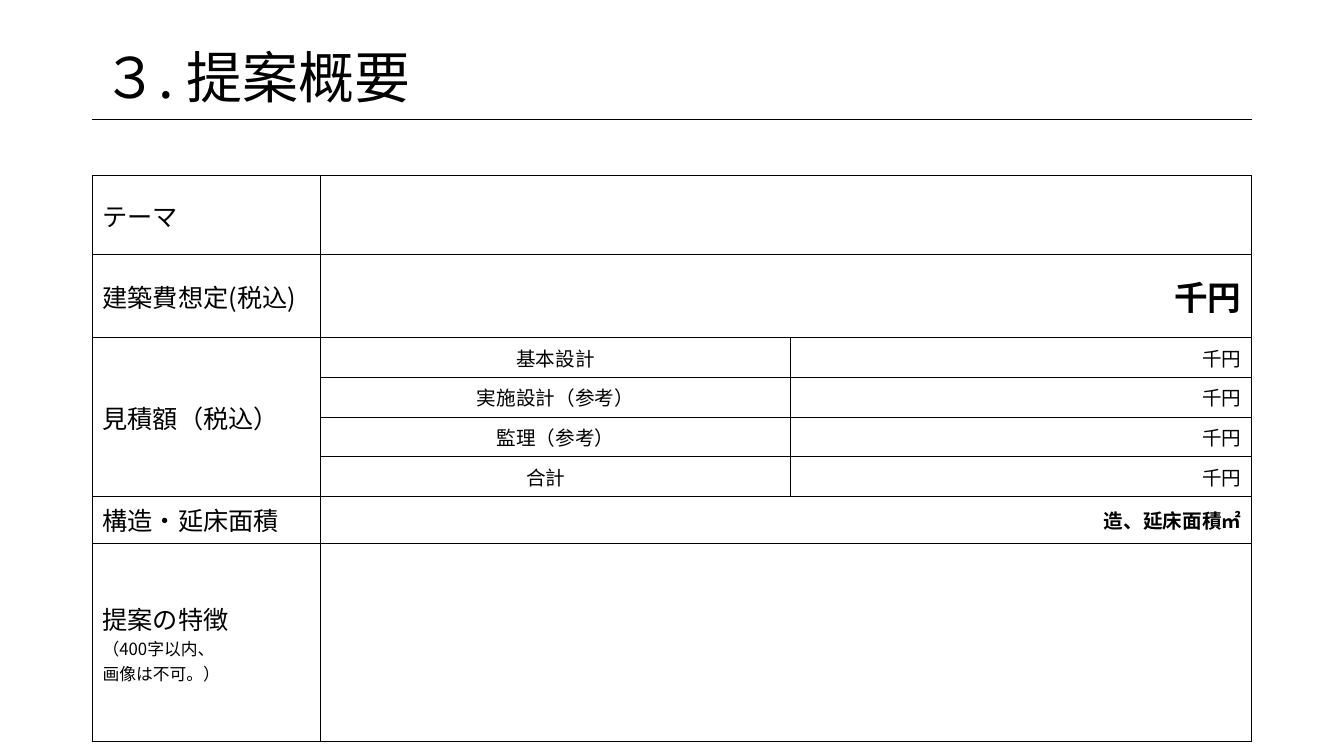
from dataclasses import dataclass

from lxml import etree
from pptx import Presentation
from pptx.dml.color import RGBColor
from pptx.enum.shapes import MSO_CONNECTOR
from pptx.enum.text import MSO_ANCHOR, MSO_AUTO_SIZE, PP_ALIGN
from pptx.oxml.ns import qn
from pptx.util import Cm, Pt

LEFT, CENTER, RIGHT = PP_ALIGN.LEFT, PP_ALIGN.CENTER, PP_ALIGN.RIGHT
MIDDLE = MSO_ANCHOR.MIDDLE
NO_AUTOFIT = MSO_AUTO_SIZE.NONE
STRAIGHT = MSO_CONNECTOR.STRAIGHT

COLORS = {"ink": "000000", "paper": "FFFFFF"}
FONT = "Noto Sans CJK JP"
LABEL_SIZE, DETAIL_SIZE, NOTE_SIZE = 18, 14, 12

MARGIN, WIDTH = 2.33, 29.21
TITLE_TOP, TITLE_HEIGHT = 1.02, 2.0
TABLE_TOP = 4.42
COLUMN_WIDTHS = (5.74, 11.86, 11.61)
ROW_HEIGHTS = (2.0, 1.4, 1.0, 1.0, 1.0, 1.0, 1.0, 5.0)


@dataclass(frozen=True)
class Line:
    text: str
    size: int = LABEL_SIZE
    bold: bool = False


@dataclass(frozen=True)
class Entry:
    row: int
    column: int
    lines: tuple[Line, ...] = ()
    align: PP_ALIGN = LEFT
    row_span: int = 1
    column_span: int = 1


ESTIMATE_ROW = 2
ESTIMATE_ITEMS = ("基本設計", "実施設計（参考）", "監理（参考）", "合計　")

ENTRIES = [
    Entry(0, 0, (Line("テーマ"),)),
    Entry(0, 1, column_span=2),
    Entry(1, 0, (Line("建築費想定(税込)"),)),
    Entry(1, 1, (Line("千円", 24, True),), RIGHT, column_span=2),
    Entry(ESTIMATE_ROW, 0, (Line("見積額（税込）"),), row_span=len(ESTIMATE_ITEMS)),
    Entry(6, 0, (Line("構造・延床面積"),)),
    Entry(6, 1, (Line("造、延床面積㎡", DETAIL_SIZE, True),), RIGHT, column_span=2),
    Entry(7, 0, (Line("提案の特徴"), Line("（400字以内、", NOTE_SIZE),
                 Line("画像は不可。）", NOTE_SIZE))),
    Entry(7, 1, column_span=2),
]
for row, item in enumerate(ESTIMATE_ITEMS, ESTIMATE_ROW):
    ENTRIES += [Entry(row, 1, (Line(item, DETAIL_SIZE),), CENTER),
                Entry(row, 2, (Line("千円", DETAIL_SIZE),), RIGHT)]


def color(name: str) -> RGBColor:
    return RGBColor.from_string(COLORS[name])


def write_line(paragraph, line: Line, align: PP_ALIGN) -> None:
    paragraph.alignment = align
    run = paragraph.add_run()
    run.text = line.text
    font_format = {"size": Pt(line.size), "bold": line.bold, "name": FONT}
    for attribute, value in font_format.items():
        setattr(run.font, attribute, value)
    run.font.color.rgb = color("ink")
    east_asian = etree.SubElement(run.font._element, qn("a:ea"))
    east_asian.set("typeface", FONT)


def style_cell(cell) -> None:
    properties = cell._tc.get_or_add_tcPr()
    for side in ("lnL", "lnR", "lnT", "lnB"):
        border = etree.SubElement(properties, qn(f"a:{side}"), w=str(Pt(1)))
        fill = etree.SubElement(border, qn("a:solidFill"))
        etree.SubElement(fill, qn("a:srgbClr"), val=COLORS["ink"])
    cell.fill.solid()
    cell.fill.fore_color.rgb = color("paper")
    cell.vertical_anchor = MIDDLE


def fill_entry(table, entry: Entry) -> None:
    cell = table.cell(entry.row, entry.column)
    if entry.row_span > 1 or entry.column_span > 1:
        cell.merge(table.cell(entry.row + entry.row_span - 1,
                              entry.column + entry.column_span - 1))
    frame = cell.text_frame
    for index, line in enumerate(entry.lines):
        paragraph = frame.add_paragraph() if index else frame.paragraphs[0]
        write_line(paragraph, line, entry.align)


def add_heading(slide) -> None:
    heading = slide.shapes.title
    place = {"left": Cm(MARGIN), "top": Cm(TITLE_TOP),
             "width": Cm(WIDTH), "height": Cm(TITLE_HEIGHT)}
    for attribute, value in place.items():
        setattr(heading, attribute, value)
    frame_format = {"vertical_anchor": MIDDLE, "word_wrap": True, "auto_size": NO_AUTOFIT}
    for attribute, value in frame_format.items():
        setattr(heading.text_frame, attribute, value)
    paragraph = heading.text_frame.paragraphs[0]
    paragraph.line_spacing = 0.9
    write_line(paragraph, Line("３. 提案概要", 40), LEFT)

    # Rule under the title
    rule_y = Cm(TITLE_TOP + TITLE_HEIGHT)
    rule = slide.shapes.add_connector(STRAIGHT, Cm(MARGIN), rule_y,
                                      Cm(MARGIN + WIDTH), rule_y)
    rule.line.color.rgb = color("ink")
    rule.line.width = Pt(0.5)
    etree.SubElement(rule._element.spPr, qn("a:effectLst"))


def add_summary(slide) -> None:
    table = slide.shapes.add_table(
        len(ROW_HEIGHTS), len(COLUMN_WIDTHS), Cm(MARGIN), Cm(TABLE_TOP),
        Cm(WIDTH), Cm(sum(ROW_HEIGHTS))).table
    table.first_row = table.horz_banding = False
    for column, width in zip(table.columns, COLUMN_WIDTHS):
        column.width = Cm(width)
    for row, height in zip(table.rows, ROW_HEIGHTS):
        row.height = Cm(height)
    for cell in table.iter_cells():
        style_cell(cell)
    for entry in ENTRIES:
        fill_entry(table, entry)


def main() -> None:
    presentation = Presentation()
    presentation.slide_width, presentation.slide_height = Cm(33.87), Cm(19.05)
    slide = presentation.slides.add_slide(presentation.slide_layouts[5])
    add_heading(slide)
    add_summary(slide)
    presentation.save("out.pptx")


if __name__ == "__main__":
    main()
